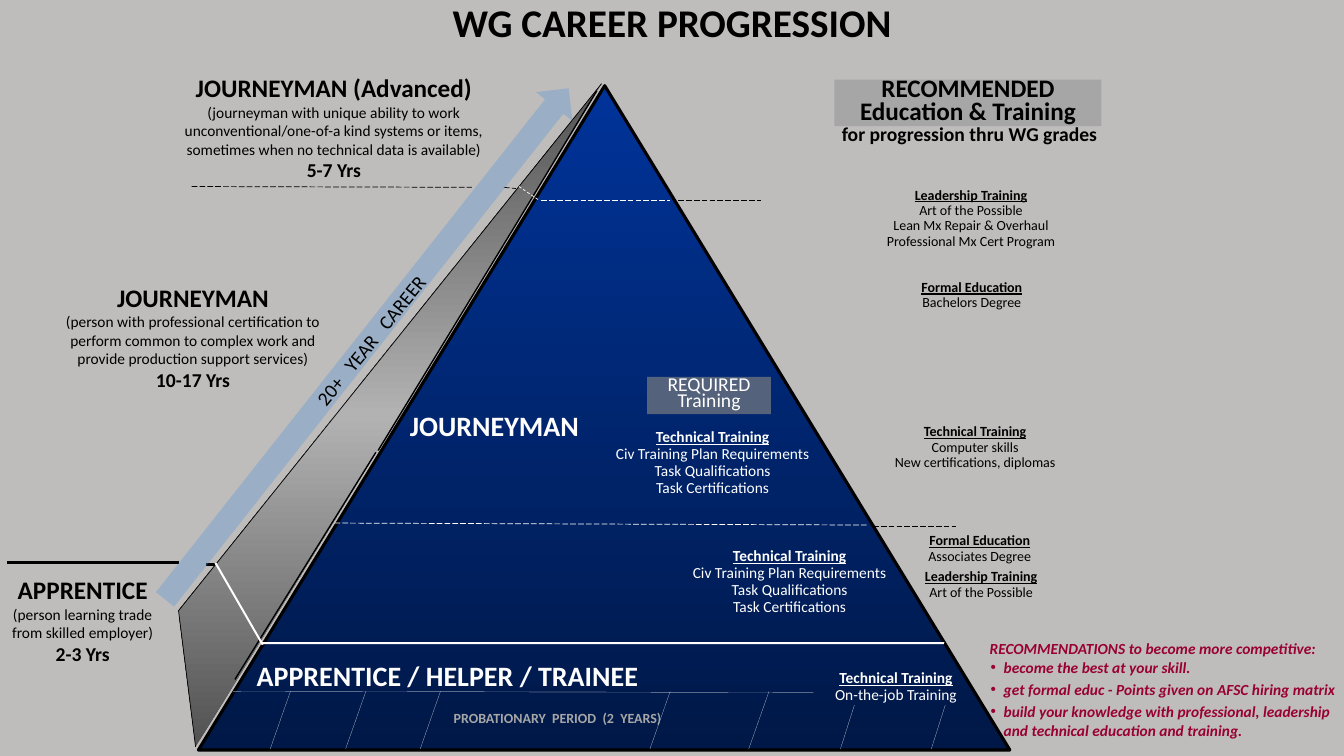
"""Builds the WG career progression slide as a training pyramid."""
from copy import deepcopy
from lxml import etree
from pptx import Presentation, util as u
from pptx.dml.color import RGBColor
from pptx.enum import dml, shapes, text
from pptx.oxml.ns import qn

THEME = {
    "font": "Calibri",
    "background": "BFBCBC", "black": "000000", "white": "FFFFFF",
    "navy": ["003399", "001847"], "steel": ["525252", "B2B2B2", "525252"],
    "banner": "A6A6A6", "badge": "808080", "arrow": "5B9BD5",
    "title": dict(size=28, bold=True),
    "level": dict(size=20, bold=True, color="FFFFFF"),
    "period": dict(size=10, bold=True, color="A6A6A6", gap=2.3),
    "role": dict(size=18, bold=True),
    "note": dict(size=11),
    "years": dict(size=14, bold=True),
    "banner text": dict(size=18, bold=True, leading=16),
    "badge text": dict(size=14, color="FFFFFF", leading=11),
    "subtitle": dict(size=14, bold=True, leading=9),
    "career": dict(size=14, gap=6.4),
    "optional": dict(size=10, leading=11),
    "required": dict(size=11, leading=12, color="FFFFFF"),
    "advice": dict(size=11, bold=True, italic=True, color="990033", align=text.PP_ALIGN.LEFT),
}
LONG, SHORT, DOT = dml.MSO_LINE.LONG_DASH, dml.MSO_LINE.DASH, dml.MSO_LINE.ROUND_DOT


def write(tf, words, size, color=THEME["black"], bold=False, italic=False, underline=False,
          align=text.PP_ALIGN.CENTER, leading=None, gap=None, bullet=False, before=None):
    """Adds one formatted paragraph; gap widens its word spaces, in points."""
    p = tf.paragraphs[0] if not tf.text else tf.add_paragraph()
    p.alignment = align
    if bullet:
        pPr = p._p.get_or_add_pPr()
        pPr.set("marL", str(u.Cm(0.33)))
        pPr.set("indent", str(u.Cm(-0.33)))
        etree.SubElement(pPr, qn("a:buChar"), char="•")
    if leading:
        p.line_spacing = u.Pt(leading)
    if before is not None:
        p.space_before = u.Pt(before)
    for piece in words.replace(" ", "| |").split("|") if gap else [words]:
        r = p.add_run()
        r.text = piece
        f = r.font
        f.name, f.size, f.bold, f.italic, f.underline = THEME["font"], u.Pt(size), bold, italic, underline
        f.color.rgb = RGBColor.from_string(color)
        if piece == " ":
            r._r.get_or_add_rPr().set("spc", str(round(gap * 100)))


def rule(x1, y1, x2, y2, color="black", width=0.5, dash=None):
    """Draws a straight line between two points given in centimetres."""
    c = s.shapes.add_connector(shapes.MSO_CONNECTOR.STRAIGHT, *map(u.Cm, (x1, y1, x2, y2)))
    c.line.color.rgb = RGBColor.from_string(THEME[color])
    c.line.width = u.Pt(width)
    if dash:
        c.line.dash_style = dash
    etree.SubElement(c._element.spPr, qn("a:effectLst"))


prs = Presentation()
prs.slide_width, prs.slide_height = u.Cm(33.87), u.Cm(19.05)
s = prs.slides.add_slide(prs.slide_layouts[1])
s.background.fill.solid()
s.background.fill.fore_color.rgb = RGBColor.from_string(THEME["background"])

title, advice = s.shapes.title, s.placeholders[1]
for sp, box in ((title, (0, -0.18, 33.87, 1.45)), (advice, (24.71, 16.46, 9.15, 2.4))):
    sp.left, sp.top, sp.width, sp.height = map(u.Cm, box)
    sp.text_frame.auto_size = text.MSO_AUTO_SIZE.NONE
write(title.text_frame, "WG CAREER PROGRESSION", **THEME["title"])
advice.text_frame.margin_right = u.Cm(0.1)
for words, before in (
    ("become the best at your skill.", 0),
    ("get formal educ - Points given on AFSC hiring matrix", 2.5),
    ("build your knowledge with professional, leadership and technical education and training.", 2.5),
):
    write(advice.text_frame, words, bullet=True, before=before, **THEME["advice"])

faces = [
    ([(15.24, 2.16), (5, 18.9), (25.45, 18.9)], True, THEME["navy"], 2.25),
    ([(15.16, 2.11), (4.5, 15.39), (4.93, 18.82)], False, THEME["steel"], 0.5),
]
for corners, closed, colors, width in faces:
    points = [(u.Cm(x), u.Cm(y)) for x, y in corners]
    outline = s.shapes.build_freeform(*points[0])
    outline.add_line_segments(points[1:], close=closed)
    sp = outline.convert_to_shape()
    sp.shadow.inherit = False
    sp.line.color.rgb = RGBColor.from_string(THEME["black"])
    sp.line.width = u.Pt(width)
    sp.fill.gradient()
    sp.fill.gradient_angle = 270
    stops = sp._element.spPr.find(".//" + qn("a:gsLst"))
    while len(stops) < len(colors):
        stops.insert(1, deepcopy(stops[0]))
    for i, (stop, color) in enumerate(zip(sp.fill.gradient_stops, colors)):
        stop.position = i / (len(colors) - 1)
        stop.color.rgb = RGBColor.from_string(color)

for x1, y1, x2, y2 in ((5.92, 17.12, 9.47, 11.4), (9.53, 11.35, 13.06, 5.56), (13.06, 5.56, 15.04, 2.29)):
    rule(x1, y1, x2, y2, width=1)
rule(5.41, 14.22, 5.18, 14.22, width=2.25)
rule(4.52, 14.17, 0.18, 14.17, width=2.25)
for x1, y1, x2, y2 in ((4.83, 4.7, 11.89, 4.72), (12.7, 4.72, 13, 4.75),
                       (17.09, 5.05, 19.18, 5.05), (22, 13.26, 24.08, 13.26)):
    rule(x1, y1, x2, y2, dash=LONG)
rule(13.64, 5.05, 16.89, 5.05, "white", dash=LONG)
rule(8.43, 13.18, 21.87, 13.23, "white", dash=LONG)
rule(13.08, 4.7, 13.56, 5.03, "white", dash=SHORT)
rule(5.87, 17.42, 20.5, 17.45, "white", 0.1, DOT)
for x in (6.81, 8.71, 10.59, 16.38, 18.87):
    rule(x, 18.87, x + 0.51, 17.42, "white", 0.1, DOT)
for x in (21.18, 23.47):
    rule(x, 18.87, x + 0.35, 17.77, "white", 0.1, DOT)

kind = shapes.MSO_SHAPE
blocks = [
    (kind.PARALLELOGRAM, (6.58, 16.18, 17.22, 0.05), 0, "white", None, []),
    (kind.PARALLELOGRAM, (4.83, 15.19, 2.39, 0.05), 240, "white", None, []),
    (kind.RECTANGLE, (21.03, 2.01, 6.73, 1.17), 0, "banner", None, ["RECOMMENDED", "Education & Training"]),
    (kind.RECTANGLE, (16.31, 9.5, 3.12, 0.94), 0, "badge", 67, ["REQUIRED", "Training"]),
    (kind.UP_ARROW, (8.66, 0.46, 1.17, 16.41), 38.3, "arrow", 37, []),
]
for preset, box, turn, name, opacity, lines in blocks:
    sp = s.shapes.add_shape(preset, *map(u.Cm, box))
    sp.rotation = turn
    sp.shadow.inherit = False
    sp.line.fill.background()
    sp.fill.solid()
    sp.fill.fore_color.rgb = RGBColor.from_string(THEME[name])
    if opacity:
        tint = sp._element.spPr.find(qn("a:solidFill"))[0]
        etree.SubElement(tint, qn("a:alpha"), val=str(opacity * 1000))
    tf = sp.text_frame
    tf.margin_left = tf.margin_right = tf.margin_top = tf.margin_bottom = 0
    for words in lines:
        write(tf, words, **THEME[name + " text"])

labels = [
    ((10.06, 10.16, 4.8, 1.12), 0, [("JOURNEYMAN", "level")]),
    ((6.1, 16.46, 10.36, 1.12), 0, [("APPRENTICE / HELPER / TRAINEE", "level")]),
    ((11.09, 17.75, 5.92, 0.69), 0, [("PROBATIONARY PERIOD (2 YEARS)", "period")]),
    ((20.37, 3.23, 8.13, 0.58), 0, [("for progression thru WG grades", "subtitle")]),
    ((2.01, 8.15, 14.68, 0.86), 309, [("20+ YEAR CAREER", "career")]),
    ((24.69, 15.98, 9.15, 0.74), 0, [("RECOMMENDATIONS to become more competitive:", "advice")]),
]
roles = [
    ((-0.2, 14.35, 4.57, 2.57), "APPRENTICE", "(person learning trade from skilled employer)", "2-3 Yrs"),
    ((1.37, 6.99, 6.99, 3.02), "JOURNEYMAN", "(person with professional certification to perform common "
     "to complex work and provide production support services)", "10-17 Yrs"),
    ((3.78, 1.7, 9.27, 3.02), "JOURNEYMAN (Advanced)", "(journeyman with unique ability to work "
     "unconventional/one-of-a kind systems or items, sometimes when no technical data is available)", "5-7 Yrs"),
]
labels += [(box, 0, list(zip(lines, ("role", "note", "years")))) for box, *lines in roles]

tasks = ["Civ Training Plan Requirements", "Task Qualifications", "Task Certifications"]
courses = [
    ((21.69, 4.6, 5.56, 1.83), "optional", "Leadership Training",
     ["Art of the Possible", "Lean Mx Repair & Overhaul", "Professional Mx Cert Program"]),
    ((22.66, 6.93, 3.66, 1.04), "optional", "Formal Education", ["Bachelors Degree"]),
    ((22.15, 10.57, 4.85, 1.42), "optional", "Technical Training",
     ["Computer skills", "New certifications, diplomas"]),
    ((22.99, 13.31, 3.4, 1.04), "optional", "Formal Education", ["Associates Degree"]),
    ((22.96, 14.22, 3.53, 1.04), "optional", "Leadership Training", ["Art of the Possible"]),
    ((15.37, 10.69, 5.18, 1.96), "required", "Technical Training", tasks),
    ((17.12, 13.69, 5.56, 1.96), "required", "Technical Training", tasks),
    ((20.75, 16.76, 3.66, 1.12), "required", "Technical Training", ["On-the-job Training"]),
]
for style in ("optional", "required"):
    THEME[style + " head"] = dict(THEME[style], bold=True, underline=True)
labels += [(box, 0, [(head, style + " head")] + [(item, style) for item in items])
           for box, style, head, items in courses]

for box, turn, lines in labels:
    sp = s.shapes.add_textbox(*map(u.Cm, box))
    sp.rotation = turn
    tf = sp.text_frame
    tf.word_wrap = True
    if lines[0][1] == "required head":
        tf.margin_left = tf.margin_right = 0
    for words, style in lines:
        write(tf, words, **THEME[style])

prs.save("out.pptx")
